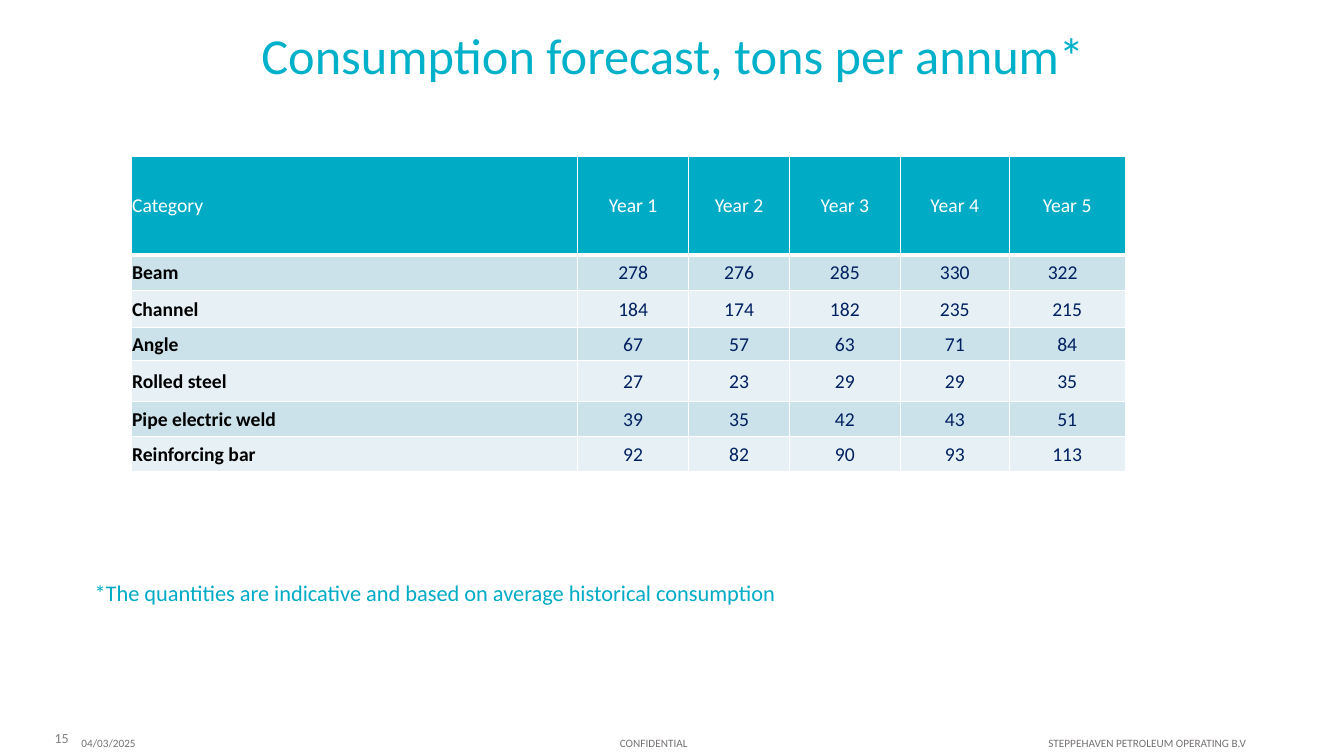
from dataclasses import dataclass

from lxml.etree import SubElement
from pptx import Presentation
from pptx.dml.color import RGBColor
from pptx.enum.text import MSO_ANCHOR, PP_ALIGN
from pptx.oxml.ns import qn
from pptx.slide import Slide
from pptx.table import _Cell
from pptx.text.text import TextFrame, _Paragraph
from pptx.util import Inches, Pt


@dataclass(frozen=True)
class Theme:
    font: str = "Calibri"
    title: str = "01B1C9"
    accent: str = "00ABC5"
    white: str = "FFFFFF"
    label: str = "000000"
    value: str = "002060"
    bands: tuple[str, str] = ("CCE2EA", "E7F1F5")
    page_number: str = "808080"
    footer: str = "767171"
    title_size: int = 36
    note_size: int = 16
    table_size: int = 14
    number_size: int = 10
    footer_size: int = 8


@dataclass(frozen=True)
class Label:
    text: str
    left: float
    top: float
    width: float
    height: float
    size: int
    color: str
    align: PP_ALIGN = PP_ALIGN.LEFT
    anchor: MSO_ANCHOR = MSO_ANCHOR.MIDDLE
    tabs: tuple[float, ...] = ()


@dataclass(frozen=True)
class Category:
    name: str
    tons: tuple[int, ...]
    height: float


THEME = Theme()
COLUMN_WIDTHS = (4.43, 1.1, 1, 1.1, 1.08, 1.15)
HEADER_HEIGHT = 0.98
CATEGORIES = (
    Category("Beam", (278, 276, 285, 330, 322), 0.35),
    Category("Channel", (184, 174, 182, 235, 215), 0.37),
    Category("Angle", (67, 57, 63, 71, 84), 0.33),
    Category("Rolled steel", (27, 23, 29, 29, 35), 0.4),
    Category("Pipe electric weld", (39, 35, 42, 43, 51), 0.35),
    Category("Reinforcing bar", (92, 82, 90, 93, 113), 0.35),
)

TITLE = Label("Consumption forecast, tons per annum*", 0.01, 0.19, 13.33, 0.91,
              THEME.title_size, THEME.title, PP_ALIGN.CENTER, MSO_ANCHOR.TOP)
FOOTER_PARTS = ("04/03/2025", "CONFIDENTIAL", "STEPPEHAVEN PETROLEUM OPERATING B.V")
LABELS = (
    Label("15", 0.11, 7.14, 0.67, 0.36, THEME.number_size, THEME.page_number,
          PP_ALIGN.RIGHT),
    Label("*The quantities are indicative and based on average historical consumption",
          0.84, 5.7, 10.55, 0.37, THEME.note_size, THEME.accent,
          anchor=MSO_ANCHOR.TOP),
    Label("\t".join(FOOTER_PARTS), 0.71, 7.23, 12.63, 0.28, THEME.footer_size,
          THEME.footer, tabs=(5.34, 9.59)),
)


def style(para: _Paragraph, size: int, color: str, align: PP_ALIGN,
          bold: bool = False) -> None:
    para.alignment = align
    para.font.name = THEME.font
    para.font.size = Pt(size)
    para.font.bold = bold
    para.font.color.rgb = RGBColor.from_string(color)


def add_tabs(para: _Paragraph, positions: tuple[float, ...]) -> None:
    tab_list = SubElement(para._p.get_or_add_pPr(), qn("a:tabLst"))
    for position in positions:
        SubElement(tab_list, qn("a:tab"), pos=str(Inches(position)), algn="l")


def write_label(frame: TextFrame, label: Label) -> None:
    frame.word_wrap = True
    frame.vertical_anchor = label.anchor
    para = frame.paragraphs[0]
    para.text = label.text
    if label.tabs:
        add_tabs(para, label.tabs)
    style(para, label.size, label.color, label.align)


def add_label(page: Slide, label: Label) -> None:
    box = page.shapes.add_textbox(Inches(label.left), Inches(label.top),
                                  Inches(label.width), Inches(label.height))
    write_label(box.text_frame, label)


def add_title(page: Slide, label: Label) -> None:
    title = page.shapes.title
    title.left, title.top = Inches(label.left), Inches(label.top)
    title.width, title.height = Inches(label.width), Inches(label.height)
    write_label(title.text_frame, label)


def set_borders(cell: _Cell, bottom: int) -> None:
    properties = cell._tc.get_or_add_tcPr()
    for side, width in (("L", 1), ("R", 1), ("T", 1), ("B", bottom)):
        line = SubElement(properties, qn(f"a:ln{side}"), w=str(Pt(width)))
        fill = SubElement(line, qn("a:solidFill"))
        SubElement(fill, qn("a:srgbClr"), val=THEME.white)


def write_cell(cell: _Cell, text: str, fill: str, color: str, is_label: bool,
               is_header: bool) -> None:
    cell.margin_left = cell.margin_right = cell.margin_top = Inches(0.01)
    cell.margin_bottom = 0
    cell.vertical_anchor = MSO_ANCHOR.MIDDLE
    set_borders(cell, bottom=3 if is_header else 1)
    cell.fill.solid()
    cell.fill.fore_color.rgb = RGBColor.from_string(fill)
    para = cell.text_frame.paragraphs[0]
    para.text = text
    style(para, THEME.table_size, color,
          PP_ALIGN.LEFT if is_label else PP_ALIGN.CENTER,
          bold=is_label and not is_header)


def add_forecast(page: Slide) -> None:
    heights = (HEADER_HEIGHT, *(category.height for category in CATEGORIES))
    table = page.shapes.add_table(
        len(heights), len(COLUMN_WIDTHS), Inches(1.3), Inches(1.55),
        Inches(sum(COLUMN_WIDTHS)), Inches(sum(heights))).table
    for column, width in zip(table.columns, COLUMN_WIDTHS):
        column.width = Inches(width)
    for row, height in zip(table.rows, heights):
        row.height = Inches(height)

    # Header row
    years = (f"Year {year}" for year in range(1, len(COLUMN_WIDTHS)))
    for column, text in enumerate(("Category", *years)):
        write_cell(table.cell(0, column), text, THEME.accent, THEME.white,
                   column == 0, True)

    # Banded category rows
    for index, category in enumerate(CATEGORIES):
        for column, content in enumerate((category.name, *category.tons)):
            write_cell(table.cell(index + 1, column), str(content),
                       THEME.bands[index % 2],
                       THEME.value if column else THEME.label, column == 0, False)

    # The last Beam value sits slightly left of centre
    table.cell(1, len(COLUMN_WIDTHS) - 1).margin_right = Inches(0.1)


def main() -> None:
    deck = Presentation()
    deck.slide_width, deck.slide_height = Inches(13.33), Inches(7.5)
    page = deck.slides.add_slide(deck.slide_layouts.get_by_name("Title Only"))

    add_title(page, TITLE)
    add_forecast(page)
    # Page number, footnote and footer
    for label in LABELS:
        add_label(page, label)

    deck.save("out.pptx")


if __name__ == "__main__":
    main()
